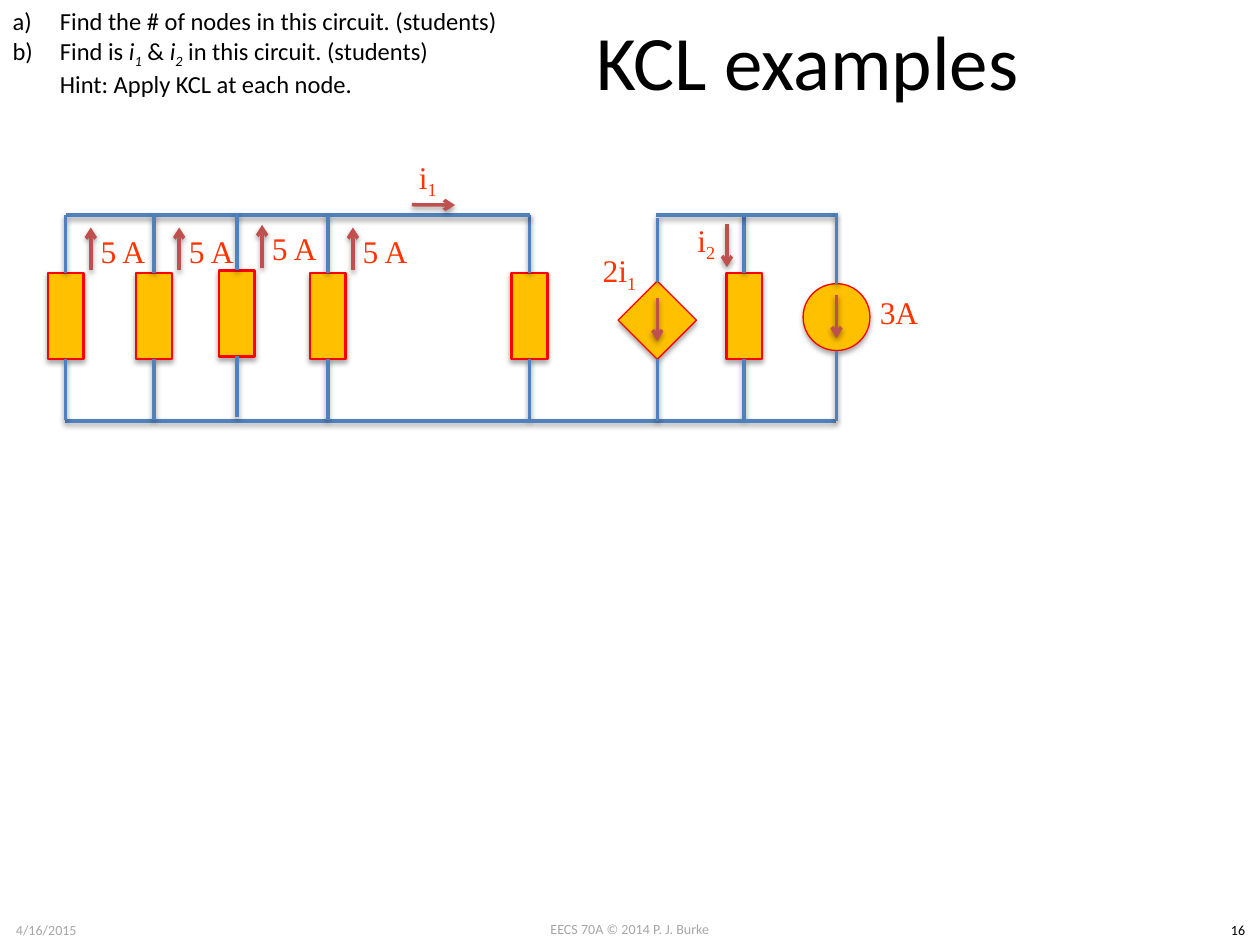
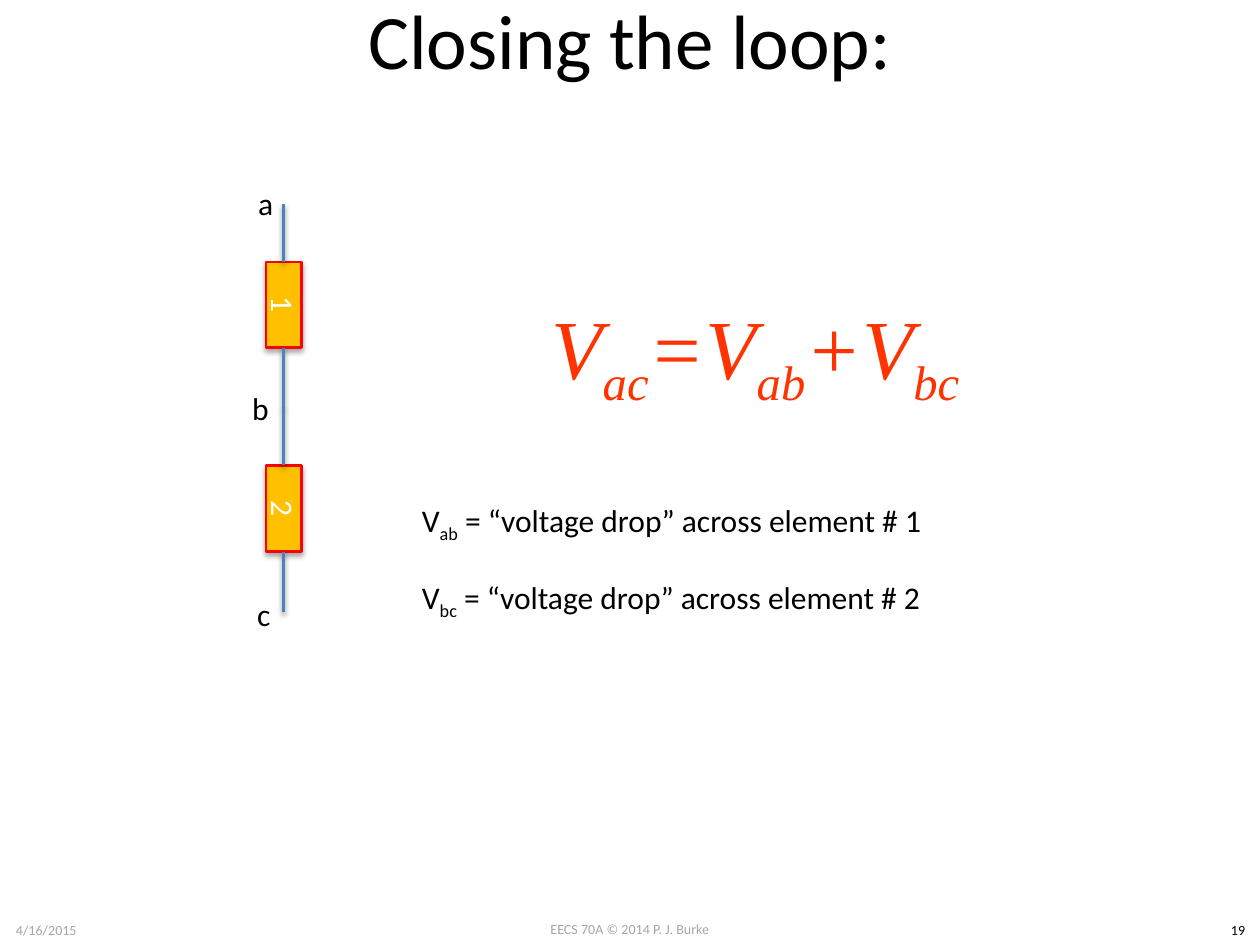
from lxml.etree import SubElement
from pptx import Presentation
from pptx.dml.color import RGBColor
from pptx.enum.shapes import MSO_CONNECTOR as Connector, MSO_SHAPE as Shape
from pptx.enum.text import MSO_ANCHOR as Anchor, MSO_AUTO_SIZE as AutoSize, PP_ALIGN as Align
from pptx.oxml.ns import qn
from pptx.util import Pt

BLACK, WHITE, GRAY = "000000", "FFFFFF", "A6A6A6"
WIRE, CURRENT, LABEL = "4F81BD", "C0504D", "FF3300"
ELEMENT_FILL, ELEMENT_EDGE = "FFC000", "FF0000"
SANS, SERIF = "Calibri", "Times New Roman"
ITALIC, SUB, ITALIC_SUB = "i", "s", "is"
PITCH = 116.4


def rgb(hex_color):
    return RGBColor.from_string(hex_color)


class CircuitDeck:
    def __init__(self):
        self.deck = Presentation()
        self.deck.slide_width, self.deck.slide_height = Pt(720), Pt(540)
        self.slide = None

    def start_slide(self, layout, title, title_box, number):
        self.slide = self.deck.slides.add_slide(self.deck.slide_layouts[layout])
        self.text("EECS 70A © 2014 P. J. Burke", 276, 522.5, 168, 17, 8, color=GRAY, align=Align.CENTER)
        self.text("4/16/2015", 0, 523.3, 53, 17, 8, color=GRAY, align=Align.CENTER)
        self.text(number, 695, 523.3, 25, 17, 8, align=Align.CENTER)
        heading = self.slide.shapes.title
        self.place(heading, *title_box)
        heading.text_frame.vertical_anchor = Anchor.MIDDLE
        paragraph = heading.text_frame.paragraphs[0]
        paragraph.alignment = Align.CENTER
        self.runs(paragraph, title, 44)

    def place(self, shape, left, top, width, height):
        shape.left, shape.top, shape.width, shape.height = map(Pt, (left, top, width, height))

    def runs(self, paragraph, parts, size, font=SANS, color=BLACK):
        for part in [parts] if isinstance(parts, str) else parts:
            words, style = (part, "") if isinstance(part, str) else part
            if words == "\n":
                paragraph.add_line_break()
                continue
            run = paragraph.add_run()
            run.text = words
            run.font.size, run.font.name = Pt(size), font
            run.font.color.rgb = rgb(color)
            if ITALIC in style:
                run.font.italic = True
            if SUB in style:
                run._r.get_or_add_rPr().set("baseline", "-25000")

    def text(self, parts, left, top, width, height, size, font=SANS, color=BLACK,
             align=Align.LEFT, anchor=Anchor.TOP, wrap=True):
        box = self.slide.shapes.add_textbox(*map(Pt, (left, top, width, height)))
        frame = box.text_frame
        frame.word_wrap, frame.vertical_anchor = wrap, anchor
        frame.paragraphs[0].alignment = align
        self.runs(frame.paragraphs[0], parts, size, font, color)

    def label(self, parts, left, top, width=55.5, height=44, size=18):
        self.text(parts, left, top, width, height, size, SERIF, LABEL, Align.CENTER, Anchor.MIDDLE)

    def lettered_list(self, items, left, top, width, height, size):
        body = self.slide.placeholders[1]
        self.place(body, left, top, width, height)
        frame = body.text_frame
        frame.auto_size, frame.word_wrap = AutoSize.NONE, True
        for index, item in enumerate(items):
            paragraph = frame.add_paragraph() if index else frame.paragraphs[0]
            paragraph.space_before = Pt(0)
            self.runs(paragraph, item, size)
            props = paragraph._p.get_or_add_pPr()
            props.set("marL", str(Pt(27)))
            props.set("indent", str(Pt(-27)))
            SubElement(props, qn("a:buFont"), typeface="+mj-lt")
            SubElement(props, qn("a:buAutoNum"), type="alphaLcParenR")

    def shadow(self, shape, opacity, distance):
        effects = SubElement(shape._element.spPr, qn("a:effectLst"))
        outer = SubElement(effects, qn("a:outerShdw"), blurRad=str(Pt(3.1)),
                           dist=str(Pt(distance)), dir="5400000", rotWithShape="0")
        black = SubElement(outer, qn("a:srgbClr"), val=BLACK)
        SubElement(black, qn("a:alpha"), val=str(opacity * 1000))

    def wire(self, x1, y1, x2, y2, color=WIRE, arrow=False):
        line = self.slide.shapes.add_connector(Connector.STRAIGHT, *map(Pt, (x1, y1, x2, y2)))
        line.line.color.rgb, line.line.width = rgb(color), Pt(2)
        if arrow:
            SubElement(line.line._get_or_add_ln(), qn("a:tailEnd"), type="arrow")
        self.shadow(line, 38, 1.6)

    def current(self, x1, y1, x2, y2):
        self.wire(x1, y1, x2, y2, CURRENT, arrow=True)

    def body(self, kind, x, y, width, height, edge, rotation=0, name=""):
        part = self.slide.shapes.add_shape(
            kind, *map(Pt, (x - width / 2, y - height / 2, width, height)))
        part.rotation = rotation
        part.fill.solid()
        part.fill.fore_color.rgb = rgb(ELEMENT_FILL)
        part.line.color.rgb, part.line.width = rgb(ELEMENT_EDGE), Pt(edge)
        self.shadow(part, 35, 1.8)
        if name:
            part.text_frame.vertical_anchor = Anchor.MIDDLE
            part.text_frame.paragraphs[0].alignment = Align.CENTER
            self.runs(part.text_frame.paragraphs[0], name, 18, color=WHITE)

    def element(self, x, top, name=""):
        self.body(Shape.RECTANGLE, x, top + 57.6, 49, 20.4, 1.5, 90, name)
        self.wire(x, top + 117, x, top + 82.2)
        self.wire(x, top + 33, x, top)

    def source(self, kind, x, y, size, reach, rotation, top, bottom):
        self.body(kind, x, y, size, size, 0.75, rotation)
        self.wire(x, y + reach, x, bottom)
        self.wire(x, y - reach, x, top)
        self.current(x, y - 12.5, x, y + 12)


def kcl_examples(deck):
    deck.start_slide(1, "KCL examples", (216.7, 0, 489.6, 68.4), "16")
    deck.lettered_list([
        ["Find the # of nodes in this circuit. (students)"],
        ["Find is ", ("i", ITALIC), ("1", ITALIC_SUB), " & ", ("i", ITALIC), ("2", ITALIC_SUB),
         " in this circuit. (students) ", "\n", "Hint: Apply KCL at each node."],
    ], 0, 0, 310, 58.3, 14)
    top, bottom = 123, 240.5
    for x in (302.5, 425.2):
        deck.element(x, top)
    deck.wire(37, bottom, 478, bottom)
    deck.wire(375, top, 478, top)
    deck.source(Shape.RECTANGLE, 375.6, 182.9, 31.7, 22, 225, top + 1.5, bottom)
    deck.wire(38, top, 303, top)
    for x, rise in ((37.5, 0), (88, 0), (135.4, 1.5), (187.3, 0)):
        deck.element(x, top - rise)
        deck.current(x + 14.4, top - rise + 31.4, x + 14.4, top - rise + 7)
        deck.label("5 A", x + 5, top - rise - 1.7)
    deck.label(["2i", ("1", SUB)], 326.2, 133.9)
    deck.label(["i", ("2", SUB)], 381.6, 121, 44, 34.5)
    deck.current(415.4, 128.2, 415.4, 152.6)
    deck.label(["i", ("1", SUB)], 222.5, 85, 44, 34.5)
    deck.current(235.4, 117, 260, 117.2)
    deck.source(Shape.OVAL, 478, 181.2, 38.2, 19.1, 180, top - 1.2, bottom)
    deck.label("3A", 486, 156.5)


def closing_the_loop(deck):
    deck.start_slide(5, "Closing the loop:", (36, -23, 648, 90), "19")
    top = 116.6
    for index, name in enumerate("12"):
        deck.element(162.1, top + index * PITCH, name)
    for index, (node, left) in enumerate((("a", 140.4), ("b", 137), ("c", 139.8))):
        deck.text(node, left, 101.6 + index * 117.3, 24, 29, 18, wrap=False)
    deck.label(["V", ("ac", SUB), "=V", ("ab", SUB), "+V", ("bc", SUB)]
               and [(words, ITALIC_SUB if words.islower() else ITALIC)
                    for words in ("V", "ac", "=V", "ab", "+V", "bc")],
               306, 143.3, 251.3, 116.6, 48)
    for index, (nodes, number) in enumerate((("ab", 1), ("bc", 2))):
        deck.text(["V", (nodes, SUB), f" = “voltage drop” across element # {number}"],
                  234, 283 + index * 44, 304, 29, 18, wrap=False)


def main():
    circuits = CircuitDeck()
    kcl_examples(circuits)
    closing_the_loop(circuits)
    circuits.deck.save("out.pptx")


if __name__ == "__main__":
    main()
